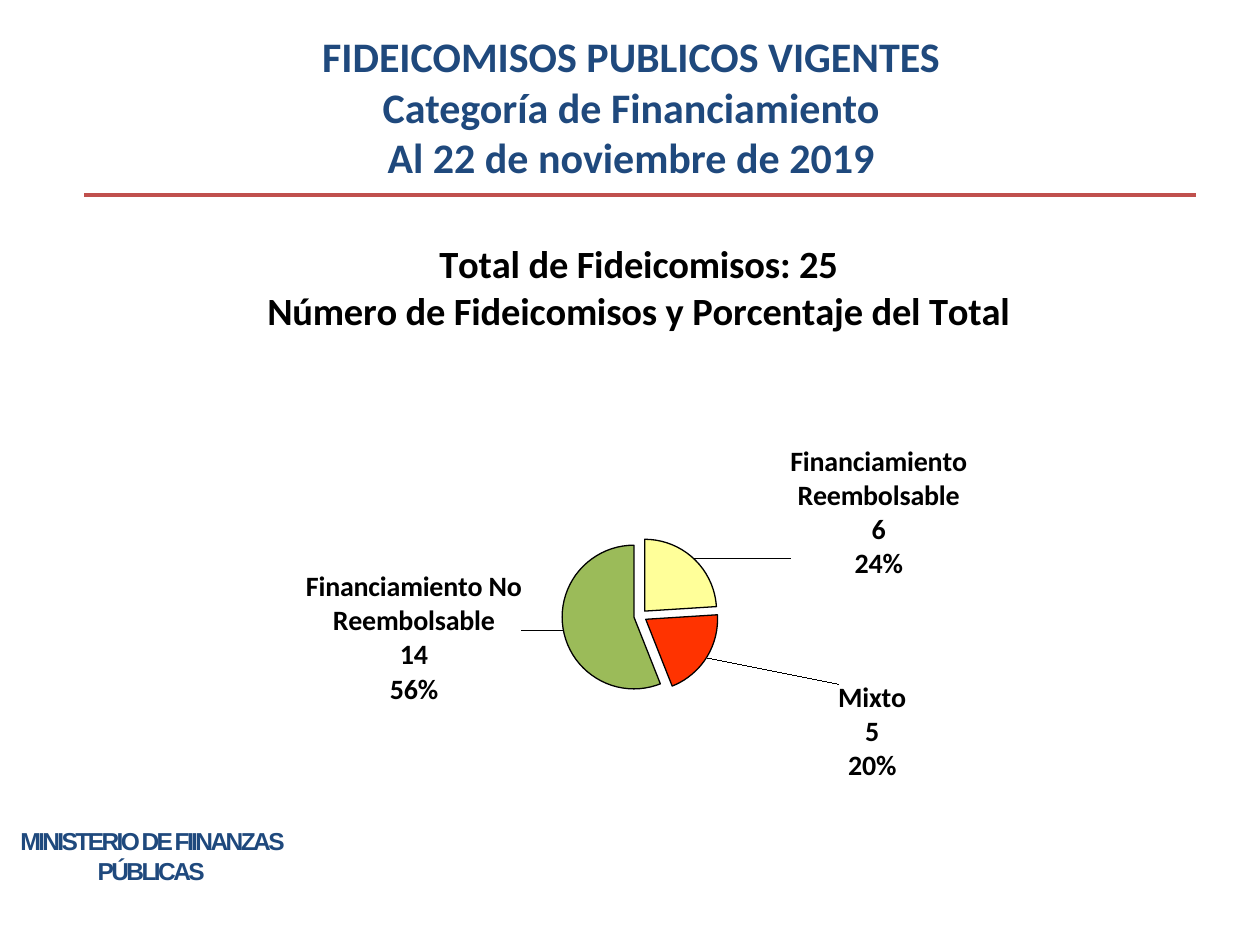
from dataclasses import dataclass

import pptx
import pptx.chart.data
import pptx.dml.color
import pptx.enum.chart
import pptx.enum.shapes
import pptx.enum.text
import pptx.oxml
import pptx.oxml.ns
import pptx.util

COLORS = {
    "navy": "1F497D",
    "rule": "C0504D",
    "black": "000000",
    "yellow": "FFFF99",
    "red": "FF3300",
    "green": "9BBB59",
}


@dataclass
class Slice:
    category: str
    count: int
    color: str
    label_x: float
    label_y: float


@dataclass
class TextBlock:
    text: str
    left: float
    top: float
    width: float
    height: float
    font: dict
    anchor: pptx.enum.text.MSO_ANCHOR
    spacing: int = 0


SLICES = [
    Slice("Financiamiento Reembolsable", 6, "yellow", 0.08, 0.05),
    Slice("Mixto", 5, "red", 0.11, 0.04),
    Slice("Financiamiento No Reembolsable", 14, "green", -0.03, -0.11),
]
BLOCKS = [
    TextBlock(
        "FIDEICOMISOS PUBLICOS VIGENTES\vCategoría de Financiamiento\nAl 22 de noviembre de 2019",
        36.7, 15.8, 648, 90,
        {"name": "Calibri", "size": pptx.util.Pt(24), "bold": True},
        pptx.enum.text.MSO_ANCHOR.MIDDLE,
    ),
    TextBlock(
        "MINISTERIO DE FIINANZAS PÚBLICAS",
        0, 468.7, 172.8, 41,
        {"name": "Arial", "size": pptx.util.Pt(14), "bold": True},
        pptx.enum.text.MSO_ANCHOR.TOP,
        -150,
    ),
]
CHART_TITLE = "Total de Fideicomisos: 25\nNúmero de Fideicomisos y Porcentaje del Total"


def rgb(name: str) -> pptx.dml.color.RGBColor:
    """Return the named colour."""
    return pptx.dml.color.RGBColor.from_string(COLORS[name])


def apply_font(font, values: dict, color: str) -> None:
    """Set font attributes and colour."""
    for attribute, value in values.items():
        setattr(font, attribute, value)
    font.color.rgb = rgb(color)


def make_layout(target: str = "", **values: float):
    """Build a manual chart layout element."""
    inner = f'<c:layoutTarget val="{target}"/>' if target else ""
    if "w" in values:
        inner += '<c:xMode val="edge"/><c:yMode val="edge"/>'
    inner += "".join(f'<c:{key} val="{value}"/>' for key, value in values.items())
    namespace = pptx.oxml.ns.nsdecls("c")
    return pptx.oxml.parse_xml(
        f"<c:layout {namespace}><c:manualLayout>{inner}</c:manualLayout></c:layout>"
    )


def add_text(slide, block: TextBlock) -> None:
    """Add a centred text block."""
    box = (pptx.util.Pt(value) for value in (block.left, block.top, block.width, block.height))
    frame = slide.shapes.add_textbox(*box).text_frame
    frame.word_wrap = True
    frame.vertical_anchor = block.anchor
    frame.text = block.text
    for paragraph in frame.paragraphs:
        paragraph.alignment = pptx.enum.text.PP_ALIGN.CENTER
        for run in paragraph.runs:
            apply_font(run.font, block.font, "navy")
            if block.spacing:
                run.font._element.set("spc", str(block.spacing))


def add_rule(slide) -> None:
    """Add the line under the heading."""
    ends = (pptx.util.Pt(value) for value in (48.2, 111.6, 683.3, 111.6))
    rule = slide.shapes.add_connector(pptx.enum.shapes.MSO_CONNECTOR.STRAIGHT, *ends)
    rule.line.color.rgb = rgb("rule")
    rule.line.width = pptx.util.Pt(2.25)
    rule._element.spPr.append(
        pptx.oxml.parse_xml(f'<a:effectLst {pptx.oxml.ns.nsdecls("a")}/>')
    )


def show_label_parts(element) -> None:
    """Show category, value and percentage on separate lines."""
    for name in ("showVal", "showCatName", "showPercent"):
        element.find(pptx.oxml.ns.qn(f"c:{name}")).set("val", "1")
    separator = pptx.oxml.parse_xml(
        f'<c:separator {pptx.oxml.ns.nsdecls("c")}>\n</c:separator>'
    )
    element.find(pptx.oxml.ns.qn("c:showBubbleSize")).addnext(separator)


def add_pie(slide) -> None:
    """Add the exploded pie with its title and labels."""
    data = pptx.chart.data.CategoryChartData()
    data.categories = [item.category for item in SLICES]
    data.add_series("Series 1", [item.count for item in SLICES])
    box = (pptx.util.Pt(value) for value in (20.2, 128.2, 652.3, 319.7))
    chart = slide.shapes.add_chart(pptx.enum.chart.XL_CHART_TYPE.PIE, *box, data).chart
    chart.has_legend = False
    apply_font(chart.font, {"name": "Calibri", "size": pptx.util.Pt(18)}, "black")

    chart.has_title = True
    frame = chart.chart_title.text_frame
    frame.text = CHART_TITLE
    title_font = {"name": "Calibri", "size": pptx.util.Pt(22), "bold": True}
    for paragraph in frame.paragraphs:
        apply_font(paragraph.runs[0].font, title_font, "black")
    title = chart.chart_title._element
    for old in title.xpath("c:layout"):
        title.remove(old)
    title_layout = make_layout(x=0.2, y=0.02)
    for axis in ("y", "x"):
        title_layout[0].insert(0, pptx.oxml.parse_xml(
            f'<c:{axis}Mode {pptx.oxml.ns.nsdecls("c")} val="edge"/>'
        ))
    title.find(pptx.oxml.ns.qn("c:tx")).addnext(title_layout)

    plot = chart.plots[0]
    plot.vary_by_categories = True
    plot_area = plot._element.getparent()
    for old in plot_area.xpath("c:layout"):
        plot_area.remove(old)
    plot_area.insert(0, make_layout("inner", x=0.46, y=0.56, w=0.14, h=0.28))

    series = plot.series[0]
    label_font = {"name": "Calibri", "size": pptx.util.Pt(16), "bold": True}
    apply_font(series.data_labels.font, label_font, "black")
    show_label_parts(series._element.xpath("c:dLbls")[0])
    for index, item in enumerate(SLICES):
        point = series.points[index]
        point.format.fill.solid()
        point.format.fill.fore_color.rgb = rgb(item.color)
        point.format.line.color.rgb = rgb("black")
        point.format.line.width = pptx.util.Pt(0.75)
        apply_font(point.data_label.font, label_font, "black")
        point.data_label.position = pptx.enum.chart.XL_LABEL_POSITION.OUTSIDE_END
        label = series._element.xpath(f"c:dLbls/c:dLbl[c:idx/@val='{index}']")[0]
        show_label_parts(label)
        label[0].addnext(make_layout(x=item.label_x, y=item.label_y))
    explosion = pptx.oxml.parse_xml(
        f'<c:explosion {pptx.oxml.ns.nsdecls("c")} val="9"/>'
    )
    series._element.xpath("c:dPt")[0].addprevious(explosion)


def main() -> None:
    """Build and save the slide."""
    presentation = pptx.Presentation()
    presentation.slide_width = pptx.util.Pt(720)
    presentation.slide_height = pptx.util.Pt(540)
    slide = presentation.slides.add_slide(presentation.slide_layouts[6])
    add_rule(slide)
    add_pie(slide)
    for block in BLOCKS:
        add_text(slide, block)
    presentation.save("out.pptx")


if __name__ == "__main__":
    main()
